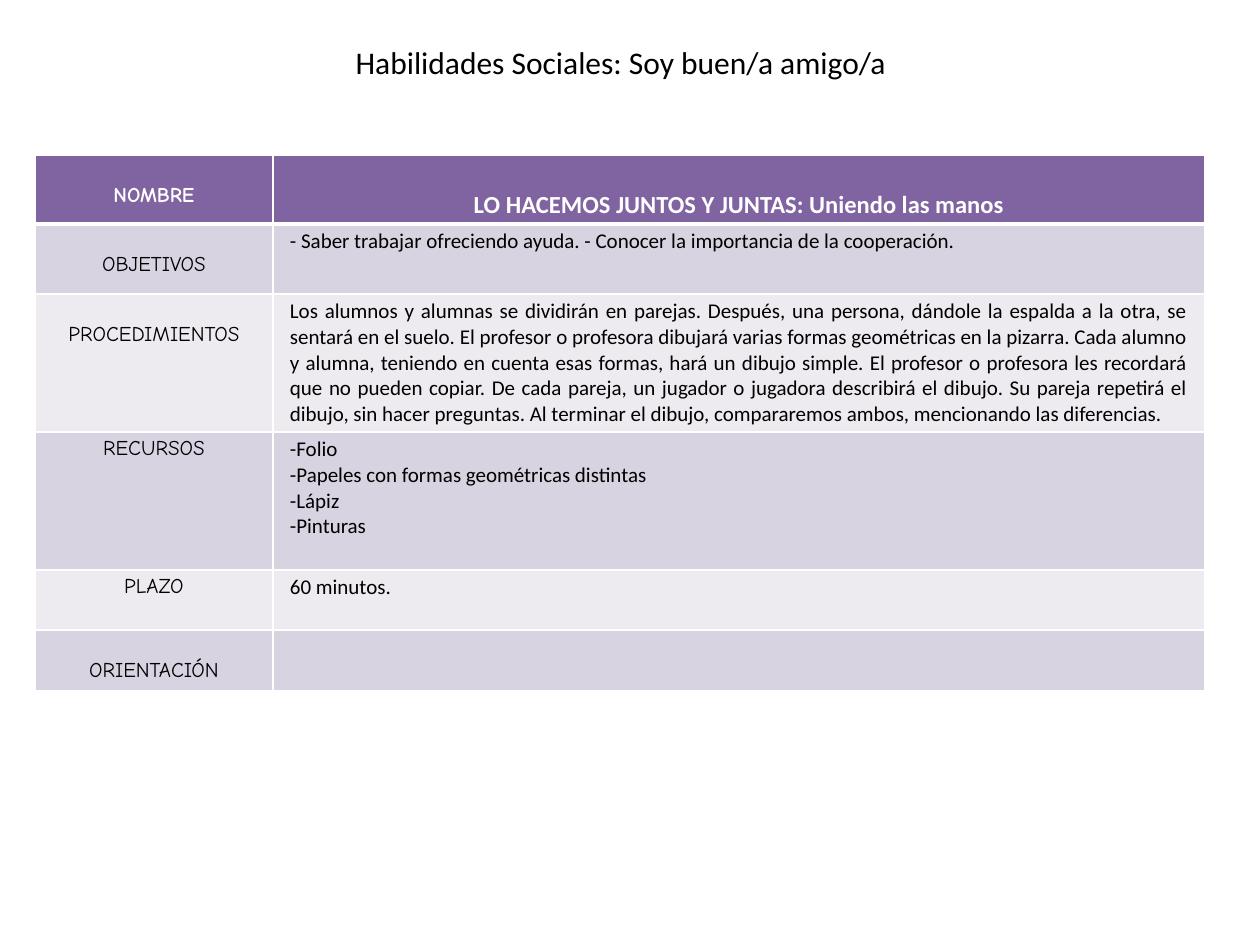
from lxml import etree
from pptx import Presentation
from pptx.dml.color import RGBColor
from pptx.enum.text import MSO_ANCHOR, MSO_AUTO_SIZE, PP_ALIGN
from pptx.oxml.ns import qn
from pptx.util import Pt

PX = 914400 // 126
LEFT, CENTER, JUSTIFY = PP_ALIGN.LEFT, PP_ALIGN.CENTER, PP_ALIGN.JUSTIFY
TOP = MSO_ANCHOR.TOP
NO_AUTOFIT = MSO_AUTO_SIZE.NONE
COLORS = {
    "header": "8064A2",
    "dark band": "D8D3E0",
    "light band": "EDEAF0",
    "white": "FFFFFF",
    "black": "000000",
}
BODY_FONT, LABEL_FONT = "Calibri", "Comic Neue"
ROWS = [  # label, paragraphs, height, top margin of label, top margin of text
    ("NOMBRE", ["LO HACEMOS JUNTOS Y JUNTAS: Uniendo las manos"], 69, 29, 35),
    ("OBJETIVOS",
     ["- Saber trabajar ofreciendo ayuda. - Conocer la importancia de la cooperación."],
     70, 29, 5),
    ("PROCEDIMIENTOS",
     ["Los alumnos y alumnas se dividirán en parejas. Después, una persona, dándole la "
      "espalda a la otra, se sentará en el suelo. El profesor o profesora dibujará varias "
      "formas geométricas en la pizarra. Cada alumno y alumna, teniendo en cuenta esas "
      "formas, hará un dibujo simple. El profesor o profesora les recordará que no pueden "
      "copiar. De cada pareja, un jugador o jugadora describirá el dibujo. Su pareja "
      "repetirá el dibujo, sin hacer preguntas. Al terminar el dibujo, compararemos ambos, "
      "mencionando las diferencias."],
     138, 29, 5),
    ("RECURSOS",
     ["-Folio", "-Papeles con formas geométricas distintas", "-Lápiz", "-Pinturas"],
     138, 5, 5),
    ("PLAZO", ["60 minutos."], 60, 5, 5),
    ("ORIENTACIÓN", [], 61, 29, 5),
]
COLUMN_WIDTHS = [238, 932]


def write_text(frame, lines, size=12, font=BODY_FONT, color="black", bold=False, align=LEFT):
    for index, line in enumerate(lines):
        para = frame.add_paragraph() if index else frame.paragraphs[0]
        para.alignment = align
        span = para.add_run()
        span.text = line
        span.font.size = Pt(size)
        span.font.name = font
        span.font.bold = bold
        span.font.color.rgb = RGBColor.from_string(COLORS[color])


def set_borders(cell, top=1, bottom=1):
    """Draw white cell borders; widths are in points."""
    properties = cell._tc.get_or_add_tcPr()
    widths = {"a:lnL": 1, "a:lnR": 1, "a:lnT": top, "a:lnB": bottom}
    for index, (tag, width) in enumerate(widths.items()):
        line = etree.Element(qn(tag), w=str(Pt(width)))
        fill = etree.SubElement(line, qn("a:solidFill"))
        etree.SubElement(fill, qn("a:srgbClr"), val=COLORS["white"])
        properties.insert(index, line)


deck = Presentation()
deck.slide_width, deck.slide_height = 1260 * PX, 945 * PX
page = deck.slides.add_slide(deck.slide_layouts[5])

title = page.shapes.title
title.left, title.top, title.width, title.height = (n * PX for n in (343, 37, 605, 50))
title.text_frame.auto_size = NO_AUTOFIT
title.text_frame.vertical_anchor = TOP
write_text(title.text_frame, ["Habilidades Sociales: Soy buen/a amigo/a"], size=18)

table_height = sum(row[2] for row in ROWS)
table = page.shapes.add_table(len(ROWS), 2, 35 * PX, 155 * PX,
                              sum(COLUMN_WIDTHS) * PX, table_height * PX).table
for column, width in zip(table.columns, COLUMN_WIDTHS):
    column.width = width * PX

for index, (label, lines, height, label_top, text_top) in enumerate(ROWS):
    is_header = index == 0
    band = "header" if is_header else "dark band" if index % 2 else "light band"
    color = "white" if is_header else "black"
    table.rows[index].height = height * PX
    label_cell, text_cell = table.cell(index, 0), table.cell(index, 1)
    for cell, top in ((label_cell, label_top), (text_cell, text_top)):
        cell.margin_left = cell.margin_right = 17 * PX
        cell.margin_top, cell.margin_bottom = top * PX, 3 * PX
        cell.vertical_anchor = TOP
        cell.fill.solid()
        cell.fill.fore_color.rgb = RGBColor.from_string(COLORS[band])
        set_borders(cell, top=3 if index == 1 else 1, bottom=3 if is_header else 1)
    write_text(label_cell.text_frame, [label], font=LABEL_FONT, color=color,
               bold=is_header, align=CENTER)
    write_text(text_cell.text_frame, lines, size=14 if is_header else 12, color=color,
               bold=is_header, align=CENTER if is_header else JUSTIFY)

deck.save("out.pptx")
